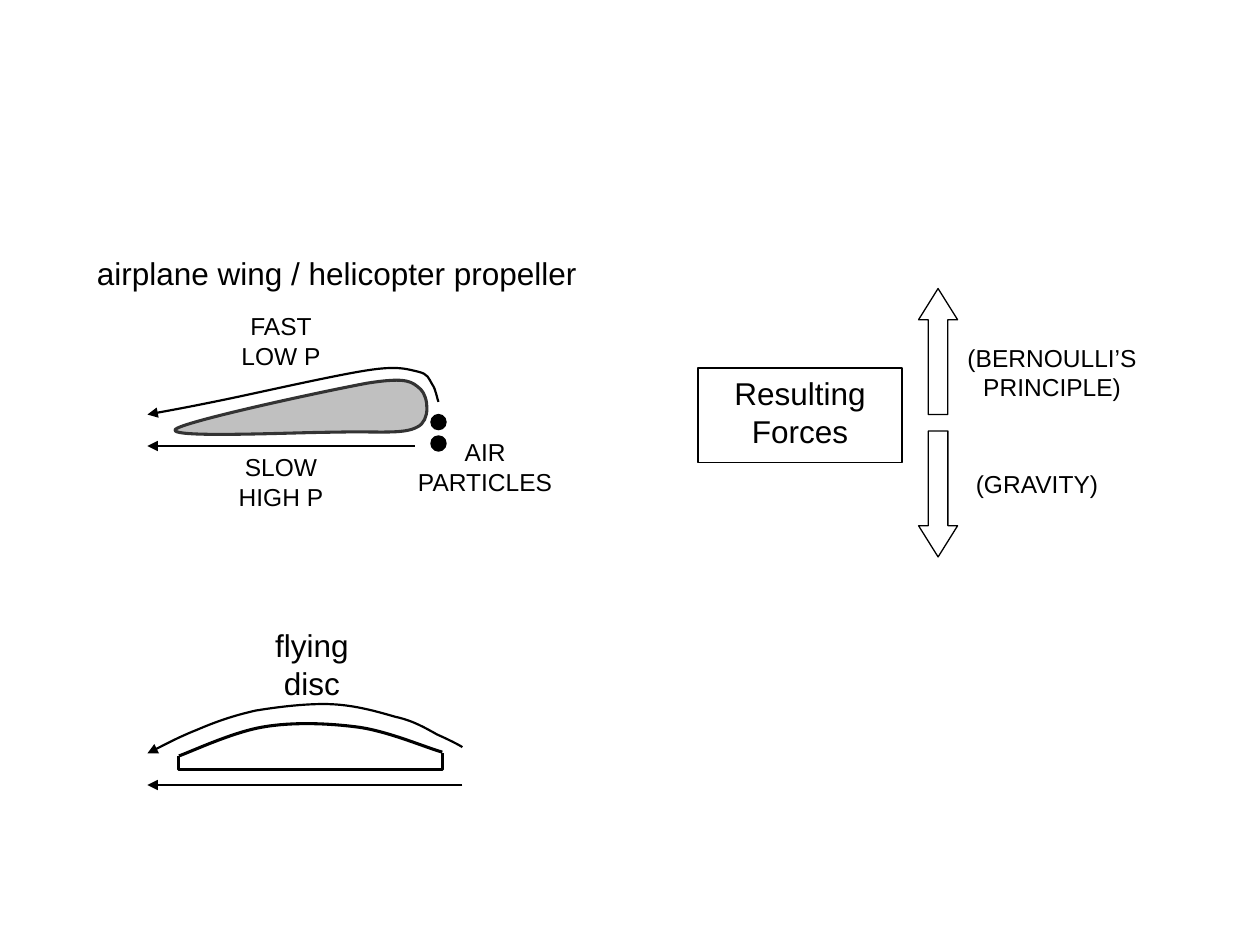
from dataclasses import dataclass

from lxml.etree import SubElement
from pptx import Presentation
from pptx.dml.color import RGBColor
from pptx.enum.shapes import MSO_CONNECTOR as Connector, MSO_SHAPE as Preset
from pptx.enum.text import MSO_ANCHOR as Anchor, PP_ALIGN as Align
from pptx.oxml.ns import qn
from pptx.util import Inches, Pt


@dataclass(frozen=True)
class Theme:
    font: str = "Arial"
    black: str = "000000"
    white: str = "FFFFFF"
    wing_fill: str = "C0C0C0"
    wing_line: str = "333333"
    heading: int = 18
    label: int = 14
    thin: float = 0.75
    flow: float = 1.25
    body: float = 1.75


THEME = Theme()


def write_text(frame, text, size=THEME.label, align=Align.CENTER,
               anchor=Anchor.TOP, wrap=True):
    """Fill a text frame, one paragraph for each line of text."""
    frame.word_wrap = wrap
    frame.vertical_anchor = anchor
    for index, line in enumerate(text.split("\n")):
        para = frame.paragraphs[0] if index == 0 else frame.add_paragraph()
        para.alignment = align
        span = para.add_run()
        span.text = line
        span.font.name = THEME.font
        span.font.size = Pt(size)
        span.font.color.rgb = RGBColor.from_string(THEME.black)


class Sketch:
    """Draws the elements of one page in the theme's style."""

    def __init__(self, page, theme):
        self.page = page
        self.theme = theme

    def style_line(self, line, width, color=None, arrow=False):
        line.width = Pt(width)
        line.color.rgb = RGBColor.from_string(color or self.theme.black)
        if arrow:
            SubElement(line._get_or_add_ln(), qn("a:tailEnd"), type="triangle")

    def style_shape(self, shape, fill, width, color=None, arrow=False):
        shape.shadow.inherit = False
        if fill:
            shape.fill.solid()
            shape.fill.fore_color.rgb = RGBColor.from_string(fill)
        else:
            shape.fill.background()
        self.style_line(shape.line, width, color, arrow)

    def text(self, left, top, width, height, text, **format):
        box = self.page.shapes.add_textbox(*map(Inches, (left, top, width, height)))
        write_text(box.text_frame, text, **format)

    def shape(self, preset, left, top, width, height, fill=None):
        shape = self.page.shapes.add_shape(
            preset, *map(Inches, (left, top, width, height)))
        self.style_shape(shape, fill, self.theme.thin)
        return shape

    def flow_line(self, start_x, end_x, y):
        line = self.page.shapes.add_connector(
            Connector.STRAIGHT, *map(Inches, (start_x, y, end_x, y)))
        self.style_line(line.line, self.theme.flow, arrow=True)
        SubElement(line._element.spPr, qn("a:effectLst"))

    def outline(self, points, width, fill=None, color=None, curved=True,
                closed=False, arrow=False):
        """Draw a polyline, or Bezier curves of three points each."""
        start, *rest = [tuple(map(Inches, point)) for point in points]
        builder = self.page.shapes.build_freeform(*start)
        builder.add_line_segments(rest, close=closed)
        shape = builder.convert_to_shape()
        if curved:
            steps = list(shape._element.iter(qn("a:lnTo")))
            for first, second, third in zip(*[iter(steps)] * 3):
                first.tag = qn("a:cubicBezTo")
                for step in (second, third):
                    first.append(step[0])
                    step.getparent().remove(step)
        self.style_shape(shape, fill, width, color, arrow)


def draw_wing(sketch):
    theme = sketch.theme
    # Wing section and the two air particles
    sketch.outline(
        [(1.39, 3.41), (1.43, 3.35), (2.59, 3.1), (2.92, 3.04),
         (3.24, 2.99), (3.27, 3.03), (3.34, 3.09),
         (3.4, 3.15), (3.42, 3.34), (3.31, 3.39),
         (3.2, 3.45), (2.99, 3.42), (2.67, 3.43),
         (2.35, 3.43), (1.35, 3.48), (1.39, 3.41)],
        theme.body, theme.wing_fill, theme.wing_line, closed=True)
    for top in (3.29, 3.46):
        sketch.shape(Preset.OVAL, 3.42, top, 0.12, 0.12, theme.black)

    # Air flow below and above
    sketch.flow_line(3.29, 1.17, 3.54)
    sketch.outline(
        [(3.48, 3.19), (3.47, 3.17), (3.46, 3.09), (3.43, 3.05),
         (3.4, 3), (3.4, 2.97), (3.32, 2.95),
         (3.23, 2.93), (3.16, 2.9), (2.91, 2.94),
         (2.65, 2.98), (2.08, 3.11), (1.79, 3.17),
         (1.5, 3.23), (1.33, 3.26), (1.17, 3.29)],
        theme.flow, arrow=True)

    # Labels
    for left, top, text in ((3.04, 3.42, "AIR\nPARTICLES"),
                            (1.42, 2.42, "FAST\nLOW P"),
                            (1.42, 3.54, "SLOW\nHIGH P")):
        sketch.text(left, top, 1.62, 0.62, text)


def draw_forces(sketch):
    theme = sketch.theme
    # Lift and gravity arrows
    for top, rotation in ((2.29, 0), (3.42, 180)):
        arrow = sketch.shape(Preset.UP_ARROW, 7.29, top, 0.31, 1, theme.white)
        arrow.adjustments[0] = 0.5
        arrow.adjustments[1] = 0.8
        arrow.rotation = rotation

    # Box and labels
    box = sketch.shape(Preset.RECTANGLE, 5.54, 2.92, 1.62, 0.75)
    write_text(box.text_frame, "Resulting Forces", size=theme.heading)
    sketch.text(7.54, 2.67, 1.62, 0.62, "(BERNOULLI’S\nPRINCIPLE)")
    sketch.text(7.42, 3.67, 1.62, 0.38, "(GRAVITY)")


def draw_disc(sketch):
    theme = sketch.theme
    # Dome and rim
    sketch.outline(
        [(1.42, 6), (1.53, 5.96), (1.85, 5.81), (2.09, 5.77),
         (2.32, 5.73), (2.6, 5.74), (2.83, 5.77),
         (3.07, 5.8), (3.37, 5.93), (3.51, 5.97)], theme.body)
    sketch.outline([(1.42, 6), (1.42, 6.11), (3.51, 6.11), (3.51, 5.98)],
                   theme.body, curved=False)

    # Air flow below and above
    sketch.flow_line(3.67, 1.17, 6.23)
    sketch.outline(
        [(3.67, 5.93), (3.64, 5.91), (3.56, 5.87), (3.47, 5.83),
         (3.38, 5.78), (3.28, 5.72), (3.14, 5.69),
         (3, 5.65), (2.83, 5.6), (2.64, 5.59),
         (2.46, 5.58), (2.21, 5.61), (2.03, 5.64),
         (1.85, 5.68), (1.71, 5.73), (1.57, 5.79),
         (1.42, 5.85), (1.25, 5.94), (1.17, 5.98)],
        theme.flow, arrow=True)


def main():
    deck = Presentation()
    deck.slide_width, deck.slide_height = Inches(10), Inches(7.5)
    sketch = Sketch(deck.slides.add_slide(deck.slide_layouts[6]), THEME)

    draw_wing(sketch)
    draw_forces(sketch)
    draw_disc(sketch)

    # Headings
    heading = dict(size=THEME.heading, wrap=False)
    sketch.text(0.67, 1.67, 4.01, 1, "airplane wing / helicopter propeller",
                align=Align.LEFT, anchor=Anchor.MIDDLE, **heading)
    sketch.text(2, 4.92, 0.95, 0.7, "flying disc", **heading)
    deck.save("out.pptx")


if __name__ == "__main__":
    main()
